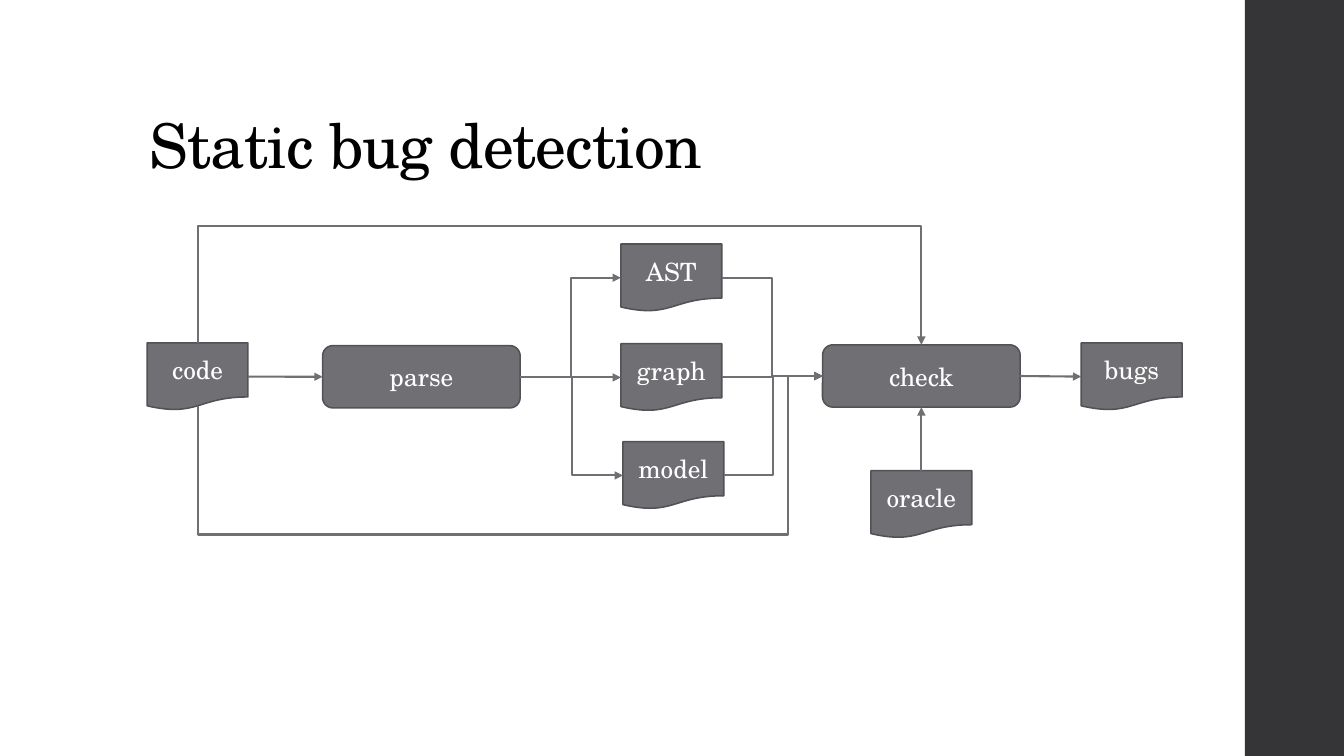
"""Build the slide 'Static bug detection': a flow from code to bugs."""
from dataclasses import dataclass

from lxml.etree import SubElement
from pptx import Presentation
from pptx.dml.color import RGBColor
from pptx.enum.shapes import MSO_CONNECTOR, MSO_SHAPE
from pptx.enum.text import MSO_ANCHOR, MSO_AUTO_SIZE, PP_ALIGN
from pptx.oxml.ns import qn
from pptx.util import Cm, Pt


@dataclass(frozen=True)
class Theme:
    font: str = "TeX Gyre Schola"
    title_size: Pt = Pt(44)
    label_size: Pt = Pt(18)
    outline_width: Pt = Pt(1.1)
    arrow_width: Pt = Pt(1.5)
    title: RGBColor = RGBColor.from_string("000000")
    label: RGBColor = RGBColor.from_string("FFFFFF")
    node: RGBColor = RGBColor.from_string("6F6F74")
    outline: RGBColor = RGBColor.from_string("525256")
    sidebar: RGBColor = RGBColor.from_string("353537")


theme = Theme()


def add_run(paragraph, text, size, color):
    run = paragraph.add_run()
    run.text = text
    run.font.name = theme.font
    run.font.size = size
    run.font.color.rgb = color
    return run


def add_arrow(kind, begin, end):
    connector = slide.shapes.add_connector(kind, *map(Cm, begin + end))
    connector.line.color.rgb = theme.node
    connector.line.width = theme.arrow_width
    properties = connector._element.spPr
    SubElement(properties.find(qn("a:ln")), qn("a:tailEnd"), type="triangle")
    SubElement(properties, qn("a:effectLst"))
    return connector


presentation = Presentation()
presentation.slide_width = Cm(33.87)
presentation.slide_height = Cm(19.05)
slide = presentation.slides.add_slide(presentation.slide_layouts[5])

title = slide.shapes.title
title.left, title.top, title.width, title.height = Cm(3.51), Cm(1.02), Cm(26.92), Cm(3.68)
title.text_frame.vertical_anchor = MSO_ANCHOR.BOTTOM
title.text_frame.auto_size = MSO_AUTO_SIZE.NONE
title_paragraph = title.text_frame.paragraphs[0]
title_paragraph.alignment = PP_ALIGN.LEFT
title_paragraph.line_spacing = 0.9
title_run = add_run(title_paragraph, "Static bug detection", theme.title_size, theme.title)
title_run.font._element.set("spc", "-50")

sidebar = slide.shapes.add_shape(MSO_SHAPE.RECTANGLE, Cm(31.37), Cm(0), Cm(2.5), Cm(19.05))
sidebar.shadow.inherit = False
sidebar.fill.solid()
sidebar.fill.fore_color.rgb = theme.sidebar
sidebar.line.fill.background()

document = (MSO_SHAPE.FLOWCHART_DOCUMENT, 2.54, 1.7)
process = (MSO_SHAPE.ROUNDED_RECTANGLE, 4.98, 1.57)
nodes = {}
for label, (preset, width, height), left, top in (
    ("code", document, 3.71, 8.64),
    ("parse", process, 8.13, 8.71),
    ("AST", document, 15.65, 6.15),
    ("graph", document, 15.65, 8.66),
    ("model", document, 15.7, 11.13),
    ("check", process, 20.73, 8.69),
    ("oracle", document, 21.95, 11.86),
    ("bugs", document, 27.25, 8.64),
):
    node = slide.shapes.add_shape(preset, Cm(left), Cm(top), Cm(width), Cm(height))
    node.shadow.inherit = False
    node.fill.solid()
    node.fill.fore_color.rgb = theme.node
    node.line.color.rgb = theme.outline
    node.line.width = theme.outline_width
    node.text_frame.word_wrap = True
    node.text_frame.vertical_anchor = MSO_ANCHOR.MIDDLE
    paragraph = node.text_frame.paragraphs[0]
    paragraph.alignment = PP_ALIGN.CENTER
    add_run(paragraph, label, theme.label_size, theme.label)
    nodes[label] = node

TOP, LEFT, BOTTOM, RIGHT = range(4)
links = [
    (MSO_CONNECTOR.STRAIGHT, "code", RIGHT, "parse", LEFT),
    (MSO_CONNECTOR.STRAIGHT, "check", RIGHT, "bugs", LEFT),
    (MSO_CONNECTOR.STRAIGHT, "oracle", TOP, "check", BOTTOM),
]
for model in ("AST", "graph", "model"):
    links.append((MSO_CONNECTOR.ELBOW, "parse", RIGHT, model, LEFT))
    links.append((MSO_CONNECTOR.ELBOW, model, RIGHT, "check", LEFT))
for kind, source, source_side, target, target_side in links:
    arrow = add_arrow(kind, (0, 0), (0, 0))
    arrow.begin_connect(nodes[source], source_side)
    arrow.end_connect(nodes[target], target_side)

for begin, end, turn, preset, adjustments in (
    ((4.98, 8.64), (23.22, 8.69), -1, "bentConnector3", (-59,)),
    ((4.98, 10.24), (20.73, 9.48), 1, "bentConnector4", (-4.25, 0.945)),
):
    center_x, center_y = (begin[0] + end[0]) / 2, (begin[1] + end[1]) / 2
    unturned = [
        (center_x + turn * (y - center_y), center_y - turn * (x - center_x))
        for x, y in (begin, end)
    ]
    detour = add_arrow(MSO_CONNECTOR.ELBOW, *unturned)
    properties = detour._element.spPr
    properties.find(qn("a:xfrm")).set("rot", str(turn % 4 * 90 * 60000))
    geometry = properties.find(qn("a:prstGeom"))
    geometry.set("prst", preset)
    guides = geometry.find(qn("a:avLst"))
    for number, share in enumerate(adjustments, 1):
        SubElement(guides, qn("a:gd"), name=f"adj{number}", fmla=f"val {round(share * 100000)}")

presentation.save("out.pptx")
